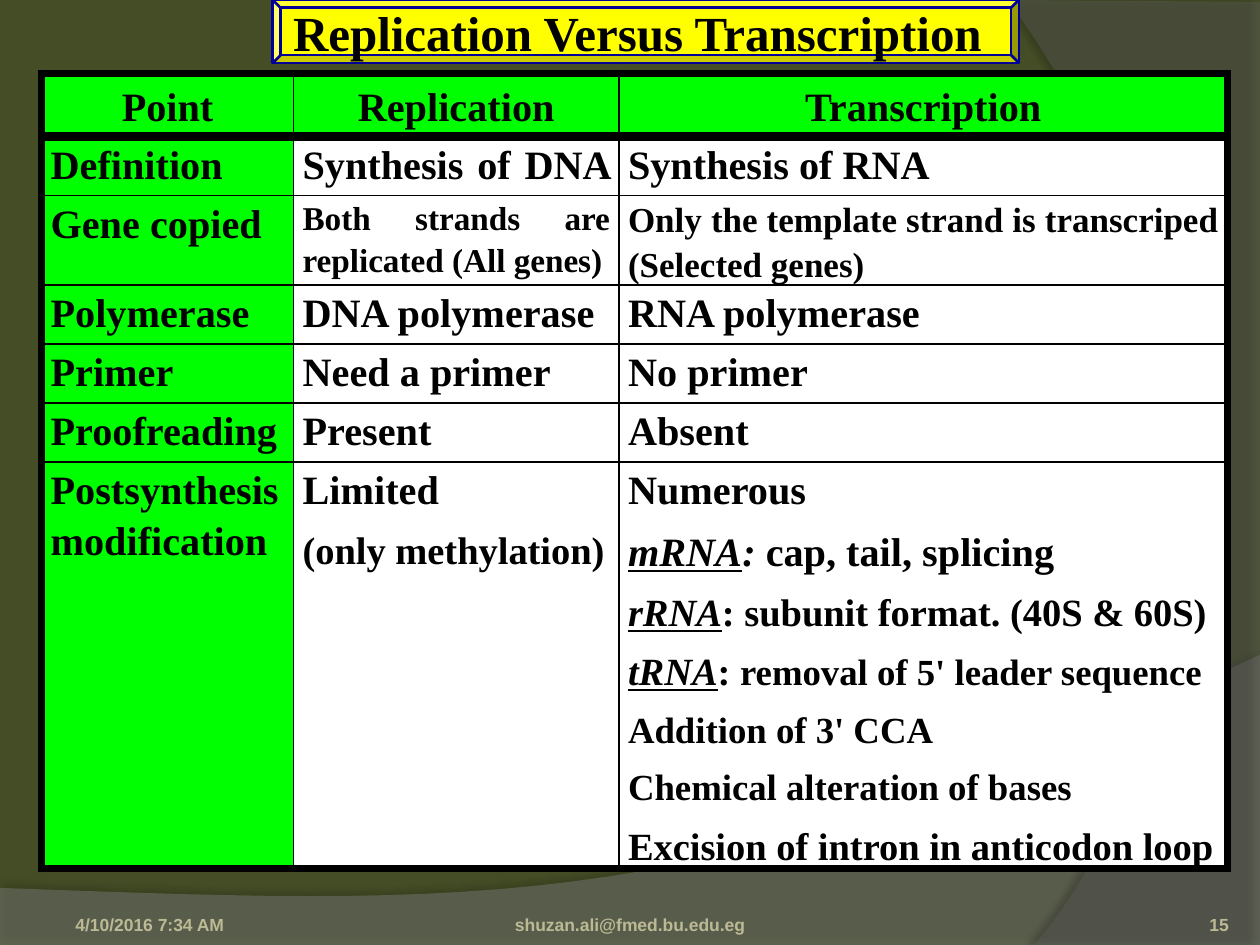
from dataclasses import dataclass

from lxml import etree
from pptx import Presentation, util as u
from pptx.dml import color
from pptx.enum import shapes, text
from pptx.oxml import ns
from pptx.slide import Slide

ALIGN = text.PP_ALIGN
ANCHOR = text.MSO_ANCHOR

COLUMNS = [5.08, 6.56, 12.27]
ROW_HEIGHTS = [1.27, 1.19, 1.8, 1.19, 1.19, 1.19, 8.18]

# A cell is a list of paragraphs, a paragraph a list of (text, format) runs.
ITALIC = {"italic": True}
LABEL = {"italic": True, "underline": True}


def line(words, size=23):
    return [(words, {"size": u.Pt(size)})]


def labelled(label, separator, words, size, words_size, separator_format):
    """Paragraph that opens with an underlined italic label."""
    points = {"size": u.Pt(size)}
    return [(label, points | LABEL), (separator, points | separator_format),
            (words, {"size": u.Pt(words_size)})]


ROWS = [
    [[line("Point")], [line("Replication")], [line("Transcription")]],
    [[line("Definition ")], [line("Synthesis of DNA ")], [line("Synthesis of RNA ")]],
    [[line("Gene copied")],
     [line("Both strands are replicated (All genes)", 19)],
     [line("Only the template strand is transcriped (Selected genes)", 20)]],
    [[line("Polymerase ")], [line("DNA polymerase")], [line("RNA polymerase")]],
    [[line("Primer ")], [line("Need a primer ")], [line("No primer")]],
    [[line("Proofreading")], [line("Present")], [line("Absent")]],
    [[line("Postsynthesis modification")],
     [line("Limited "), line("(only methylation)", 22)],
     [line("Numerous "),
      labelled("mRNA", ": ", "cap, tail, splicing ", 23, 23, ITALIC),
      labelled("rRNA", ": ", "subunit format. (40S & 60S)", 22, 22, {}),
      labelled("tRNA", ": ", "removal of 5' leader sequence", 22, 21, {}),
      line("Addition of 3' CCA", 21),
      line("Chemical alteration of bases", 21),
      line("Excision of intron in anticodon loop", 22)]],
]


def rgb(value):
    return color.RGBColor.from_string(value)


def apply(target, values):
    for name, value in values.items():
        setattr(target, name, value)


def paint(target, value):
    target.fill.solid()
    target.fill.fore_color.rgb = rgb(value)


def child(parent, tag, **attributes):
    element = etree.SubElement(parent, ns.qn(tag))
    for name, value in attributes.items():
        element.set(name, str(value))
    return element


def curve(start, first, second, end, steps=30):
    """Points along a cubic Bezier curve, without its start."""
    points = []
    for step in range(1, steps + 1):
        t = step / steps
        weights = ((1 - t) ** 3, 3 * t * (1 - t) ** 2, 3 * t * t * (1 - t), t ** 3)
        points.append(tuple(
            sum(weight * value for weight, value in zip(weights, values))
            for values in zip(start, first, second, end)))
    return points


@dataclass
class Page:
    slide: Slide
    serif: str = "Times New Roman"
    sans: str = "Arial"
    ink: str = "000000"
    muted: str = "BCB995"
    header: str = "00FF00"
    paper: str = "FFFFFF"

    def add_runs(self, paragraph, runs, font, ink):
        for words, values in runs:
            run = paragraph.add_run()
            run.text = words
            apply(run.font, {"name": font, "bold": True} | values)
            run.font.color.rgb = rgb(ink)

    def wave(self, points, fill, opacity, shadow_opacity, distance, direction):
        """Translucent background outline with a soft shadow."""
        scaled = [(u.Cm(x), u.Cm(y)) for x, y in points]
        builder = self.slide.shapes.build_freeform(*scaled[0])
        builder.add_line_segments(scaled[1:], close=True)
        shape = builder.convert_to_shape()
        paint(shape, fill)
        shape.line.fill.background()
        properties = shape.element.spPr
        child(properties.find(".//" + ns.qn("a:srgbClr")), "a:alpha", val=opacity * 1000)
        shadow = child(child(properties, "a:effectLst"), "a:outerShdw",
                       blurRad=u.Pt(4), dist=u.Pt(distance),
                       dir=direction * 60000, algn="ctr", rotWithShape=0)
        child(child(shadow, "a:srgbClr", val=self.ink), "a:alpha", val=shadow_opacity * 1000)

    def borders(self, cell, widths):
        properties = cell._tc.get_or_add_tcPr()
        for side, width in widths.items():
            edge = child(properties, "a:ln" + side, w=u.Pt(width), cap="flat", cmpd="sng")
            child(child(edge, "a:solidFill"), "a:srgbClr", val=self.ink)

    def table(self, left, top, rows, columns, heights):
        frame = self.slide.shapes.add_table(
            len(rows), len(columns), u.Cm(left), u.Cm(top),
            u.Cm(sum(columns)), u.Cm(sum(heights)))
        table = frame.table
        apply(table, {"first_row": False, "horz_banding": False})
        for column, width in zip(table.columns, columns):
            column.width = u.Cm(width)
        for row, height in zip(table.rows, heights):
            row.height = u.Cm(height)
        last_row, last_column = len(rows) - 1, len(columns) - 1
        for i, row in enumerate(rows):
            for j, paragraphs in enumerate(row):
                cell = table.cell(i, j)
                self.borders(cell, {
                    "L": 4.5 if j == 0 else 1,
                    "R": 4.5 if j == last_column else 1,
                    "T": {0: 4.5, 1: 6}.get(i, 1),
                    "B": {0: 6, last_row: 4.5}.get(i, 1)})
                paint(cell, self.header if i == 0 or j == 0 else self.paper)
                apply(cell, {
                    "margin_left": u.Cm(0.18), "margin_right": u.Cm(0.18),
                    "margin_top": 0, "margin_bottom": 0,
                    "vertical_anchor": ANCHOR.MIDDLE if i == 0 else ANCHOR.TOP})
                self.fill_cell(cell, paragraphs, ALIGN.CENTER if i == 0 else ALIGN.JUSTIFY)

    def fill_cell(self, cell, paragraphs, alignment):
        frame = cell.text_frame
        for number, runs in enumerate(paragraphs):
            paragraph = frame.add_paragraph() if number else frame.paragraphs[0]
            apply(paragraph, {"alignment": alignment, "line_spacing": 1.15,
                              "space_after": u.Pt(6)})
            self.add_runs(paragraph, runs, self.serif, self.ink)

    def title(self, words, left, top, width, height):
        shape = self.slide.shapes.add_shape(
            shapes.MSO_SHAPE.BEVEL, u.Cm(left), u.Cm(top), u.Cm(width), u.Cm(height))
        shape.shadow.inherit = False
        paint(shape, "FFFF00")
        shape.line.color.rgb = rgb("000099")
        shape.line.width = u.Pt(1.5)
        apply(shape.text_frame, {"vertical_anchor": ANCHOR.MIDDLE, "word_wrap": True})
        paragraph = shape.text_frame.paragraphs[0]
        paragraph.alignment = ALIGN.LEFT
        self.add_runs(paragraph, line(words, 28), self.serif, self.ink)

    def footer(self, words, left, width, margin, alignment):
        box = self.slide.shapes.add_textbox(u.Cm(left), u.Cm(17.83), u.Cm(width), u.Cm(1.02))
        apply(box.text_frame, {
            "word_wrap": True, "vertical_anchor": ANCHOR.BOTTOM,
            "margin_left": u.Cm(margin), "margin_right": u.Cm(margin),
            "margin_top": u.Cm(0.13), "margin_bottom": 0})
        paragraph = box.text_frame.paragraphs[0]
        paragraph.alignment = alignment
        self.add_runs(paragraph, line(words, 10), self.sans, self.muted)


def main():
    presentation = Presentation()
    apply(presentation, {"slide_width": u.Cm(25.4), "slide_height": u.Cm(19.05)})
    slide = presentation.slides.add_slide(presentation.slide_layouts[6])
    paint(slide.background, "444D26")
    page = Page(slide)

    bottom = [(0, 17.9), (0, 19.08), (25.4, 19.08), (25.4, 13.2)]
    bottom += curve(bottom[-1], (14.2, 18.51), (9.93, 18.26), bottom[0])
    page.wave(bottom, "7F7F7F", 45, 35, 3.5, 270)
    side = [(25.4, 0.04), (25.4, 19.05), (20.85, 19.05)]
    side += curve(side[-1], (23.75, 15.72), (25.86, 7.62), (20.32, 0))
    page.wave(side, "5E5E5E", 40, 45, 4, 180)

    page.table(0.84, 1.48, ROWS, COLUMNS, ROW_HEIGHTS)
    page.title("Replication Versus Transcription", 5.5, 0, 15.04, 1.27)
    page.footer("4/10/2016 7:34 AM", 1.27, 5.93, 0.25, ALIGN.LEFT)
    page.footer("shuzan.ali@fmed.bu.edu.eg", 8.68, 8.04, 0, ALIGN.CENTER)
    page.footer("15", 22.65, 2.12, 0, ALIGN.RIGHT)
    presentation.save("out.pptx")


if __name__ == "__main__":
    main()
